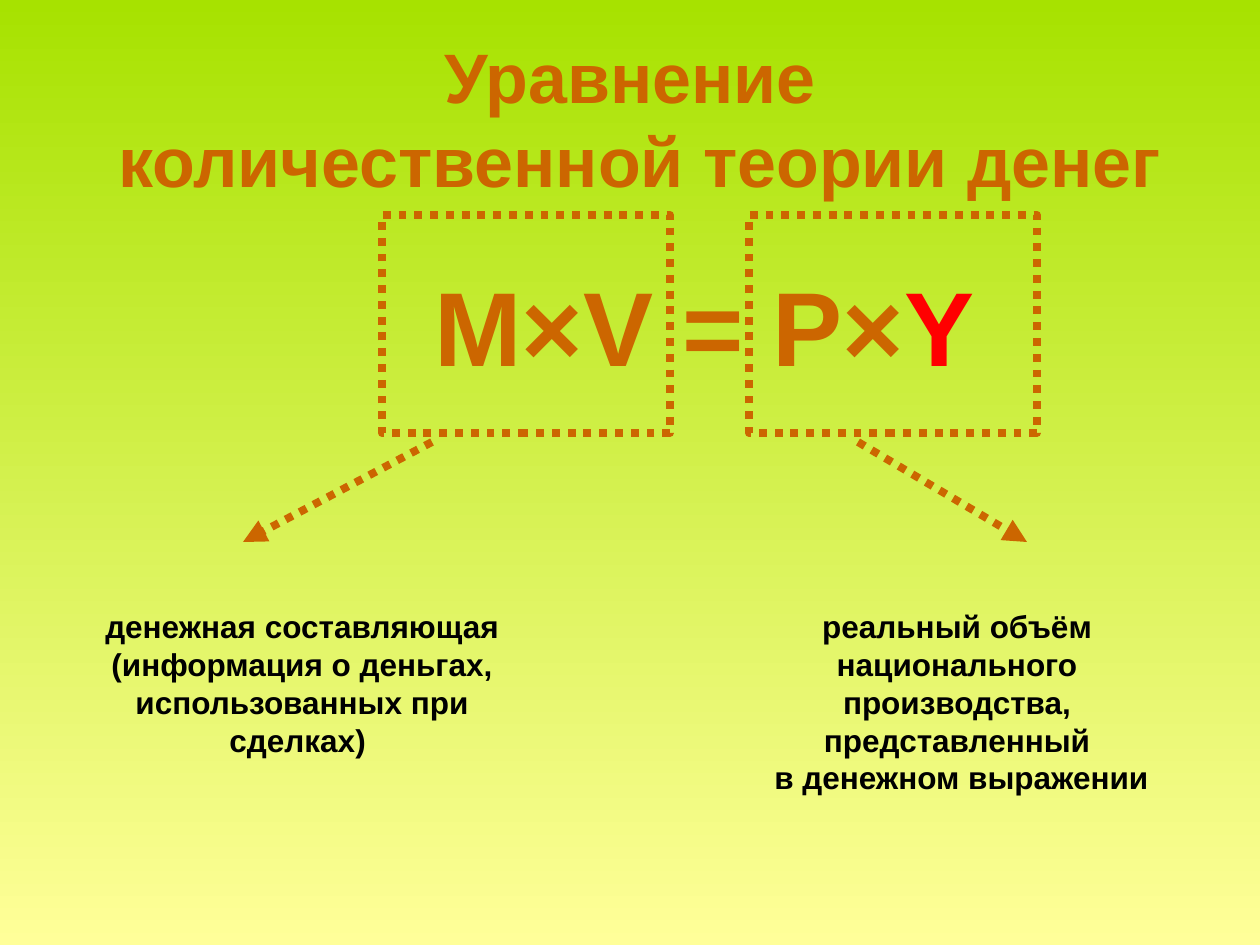
from pptx import Presentation
from pptx.dml.color import RGBColor
from pptx.enum.dml import MSO_LINE_DASH_STYLE as Dash
from pptx.enum.shapes import MSO_CONNECTOR_TYPE as Connector, MSO_SHAPE as Shape
from pptx.enum.text import MSO_ANCHOR as Anchor, MSO_AUTO_SIZE as AutoSize, PP_ALIGN as Align
from pptx.oxml.ns import qn
from pptx.util import Emu, Pt
from lxml.etree import SubElement

COLORS = {
    "accent": "CC6600",
    "highlight": "FF0000",
    "text": "000000",
    "top": "A7E200",
    "bottom": "FFFF99",
}


def px(length):
    return Emu(round(length * 914400 / 126))


def color(name):
    return RGBColor.from_string(COLORS[name])


class SlideBuilder:
    font_name = "Arial"
    line_width = Pt(4.5)

    def __init__(self, slide):
        self.slide = slide

    def background(self, top, bottom):
        fill = self.slide.background.fill
        fill.gradient()
        fill.gradient_angle = 270
        for stop, name, position in zip(fill.gradient_stops, (top, bottom), (0, 1)):
            stop.color.rgb = color(name)
            stop.position = position

    def text(self, box, paragraphs, size, align=Align.CENTER, anchor=Anchor.TOP, wrap=True):
        shape = self.slide.shapes.add_textbox(*map(px, box))
        frame = shape.text_frame
        frame.word_wrap = wrap
        frame.auto_size = AutoSize.NONE
        frame.vertical_anchor = anchor
        for index, runs in enumerate(paragraphs):
            paragraph = frame.add_paragraph() if index else frame.paragraphs[0]
            paragraph.alignment = align
            for content, name in runs:
                run = paragraph.add_run()
                run.text = content
                run.font.name = self.font_name
                run.font.size = Pt(size)
                run.font.bold = True
                run.font.color.rgb = color(name)

    def dotted(self, line):
        line.color.rgb = color("accent")
        line.width = self.line_width
        line.dash_style = Dash.ROUND_DOT

    def frame(self, box):
        shape = self.slide.shapes.add_shape(Shape.RECTANGLE, *map(px, box))
        shape.shadow.inherit = False
        shape.fill.background()
        self.dotted(shape.line)

    def arrow(self, start, end):
        connector = self.slide.shapes.add_connector(
            Connector.STRAIGHT, *map(px, (*start, *end))
        )
        self.dotted(connector.line)
        SubElement(connector.line._get_or_add_ln(), qn("a:tailEnd"), type="triangle")
        SubElement(connector._element.spPr, qn("a:effectLst"))


def main():
    presentation = Presentation()
    presentation.slide_width, presentation.slide_height = px(1260), px(945)
    slide = presentation.slides.add_slide(presentation.slide_layouts[6])
    builder = SlideBuilder(slide)
    builder.background("top", "bottom")

    builder.text(
        (63, 38, 1134, 158),
        [[("Уравнение", "accent")], [(" количественной теории денег", "accent")]],
        40,
        anchor=Anchor.MIDDLE,
    )
    builder.text(
        (422, 255, 587, 139),
        [[("M×V = P×", "accent"), ("Y", "highlight")]],
        60,
        align=Align.LEFT,
        anchor=Anchor.MIDDLE,
        wrap=False,
    )

    sides = [
        (382, (432, 243), 54, [
            "денежная составляющая (информация о деньгах, использованных при сделках) ",
        ]),
        (749, (858, 1027), 709, [
            "реальный объём национального производства, представленный",
            " в денежном выражении",
        ]),
    ]
    for frame_left, (start, end), text_left, lines in sides:
        builder.frame((frame_left, 215, 288, 218))
        builder.arrow((start, 442), (end, 542))
        builder.text(
            (text_left, 601, 496, 202), [[(line, "text")] for line in lines], 18
        )

    presentation.save("out.pptx")


if __name__ == "__main__":
    main()
